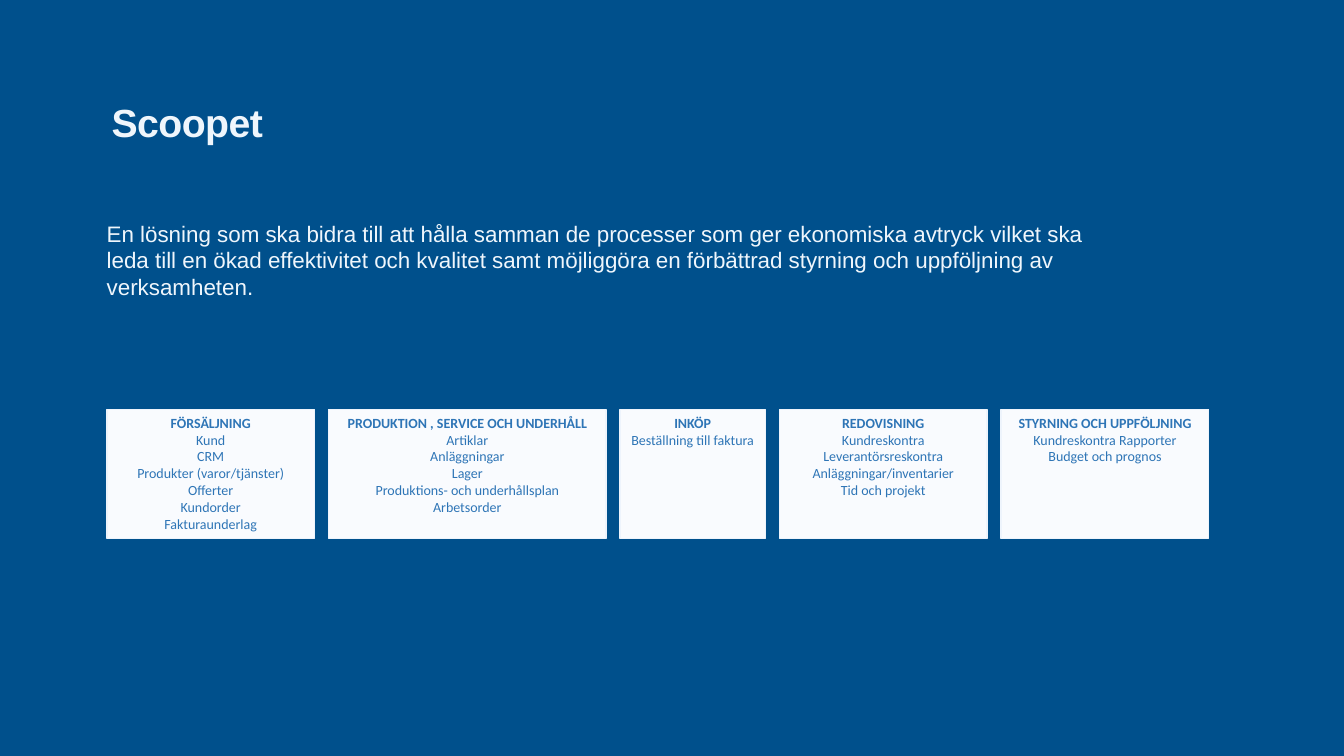
from pptx import Presentation
from pptx.dml.color import RGBColor
from pptx.enum import shapes, text
from pptx.util import Inches, Pt

COLORS = {
    "background": "00508C",
    "light_text": "EFF6FC",
    "card_fill": "F9FBFE",
    "card_line": "EEF4FC",
    "card_text": "2E75B6",
}

INTRO = (
    "En lösning som ska bidra till att hålla samman de processer som ger "
    "ekonomiska avtryck vilket ska leda till en ökad effektivitet och kvalitet "
    "samt möjliggöra en förbättrad styrning och uppföljning av verksamheten."
)

# Width in inches, heading, items
PROCESSES = [
    (2.06, "FÖRSÄLJNING",
     ["Kund", "CRM", "Produkter (varor/tjänster)", "Offerter", "Kundorder",
      "Fakturaunderlag"]),
    (2.75, "PRODUKTION , SERVICE OCH UNDERHÅLL",
     ["Artiklar", "Anläggningar", "Lager", "Produktions- och underhållsplan",
      "Arbetsorder"]),
    (1.44, "INKÖP", ["Beställning till faktura"]),
    (2.06, "REDOVISNING",
     ["Kundreskontra Leverantörsreskontra", "Anläggningar/inventarier",
      "Tid och projekt"]),
    (2.06, "STYRNING OCH UPPFÖLJNING",
     ["Kundreskontra Rapporter", "Budget och prognos"]),
]
CARD_LEFT, CARD_TOP, CARD_HEIGHT, CARD_GAP = 1.06, 4.06, 1.28, 0.14


def rgb(name):
    return RGBColor.from_string(COLORS[name])


class SlideBuilder:
    TITLE = {"name": "Arial", "size": Pt(28), "bold": True}
    BODY = {"name": "Arial", "size": Pt(16), "bold": False}
    HEADING = {"name": "Calibri", "size": Pt(10), "bold": True}
    ITEM = {**HEADING, "bold": False}

    def __init__(self, prs):
        self.slide = prs.slides.add_slide(prs.slide_layouts[6])
        fill = self.slide.background.fill
        fill.solid()
        fill.fore_color.rgb = rgb("background")

    def add_run(self, p, words, style, color):
        r = p.add_run()
        r.text = words
        for key, value in style.items():
            setattr(r.font, key, value)
        r.font.color.rgb = rgb(color)
        return r

    def text_box(self, box, words, style, anchor=text.MSO_ANCHOR.TOP):
        """Add one wrapped paragraph; return the paragraph and its run."""
        tf = self.slide.shapes.add_textbox(*map(Inches, box)).text_frame
        tf.word_wrap = True
        tf.vertical_anchor = anchor
        p = tf.paragraphs[0]
        return p, self.add_run(p, words, style, "light_text")

    def title(self, box, words):
        p, r = self.text_box(box, words, self.TITLE, text.MSO_ANCHOR.BOTTOM)
        p.line_spacing = 0.9
        r.font._element.set("spc", "-40")

    def card(self, box, heading, items):
        sp = self.slide.shapes.add_shape(
            shapes.MSO_SHAPE.RECTANGLE, *map(Inches, box))
        sp.shadow.inherit = False
        sp.fill.solid()
        sp.fill.fore_color.rgb = rgb("card_fill")
        sp.line.color.rgb = rgb("card_line")
        sp.line.width = Pt(1)
        tf = sp.text_frame
        tf.word_wrap = True
        tf.vertical_anchor = text.MSO_ANCHOR.TOP
        for i, words in enumerate([heading, *items]):
            p = tf.add_paragraph() if i else tf.paragraphs[0]
            p.alignment = text.PP_ALIGN.CENTER
            self.add_run(p, words, self.ITEM if i else self.HEADING, "card_text")


def main():
    prs = Presentation()
    prs.slide_width, prs.slide_height = Inches(13.33), Inches(7.5)
    s = SlideBuilder(prs)
    s.title((1.01, 0.77, 9.37, 0.73), "Scoopet")
    s.text_box((0.96, 2.13, 10.15, 0.91), INTRO, s.BODY)
    left = CARD_LEFT
    for width, heading, items in PROCESSES:
        s.card((left, CARD_TOP, width, CARD_HEIGHT), heading, items)
        left += width + CARD_GAP
    prs.save("out.pptx")


if __name__ == "__main__":
    main()
